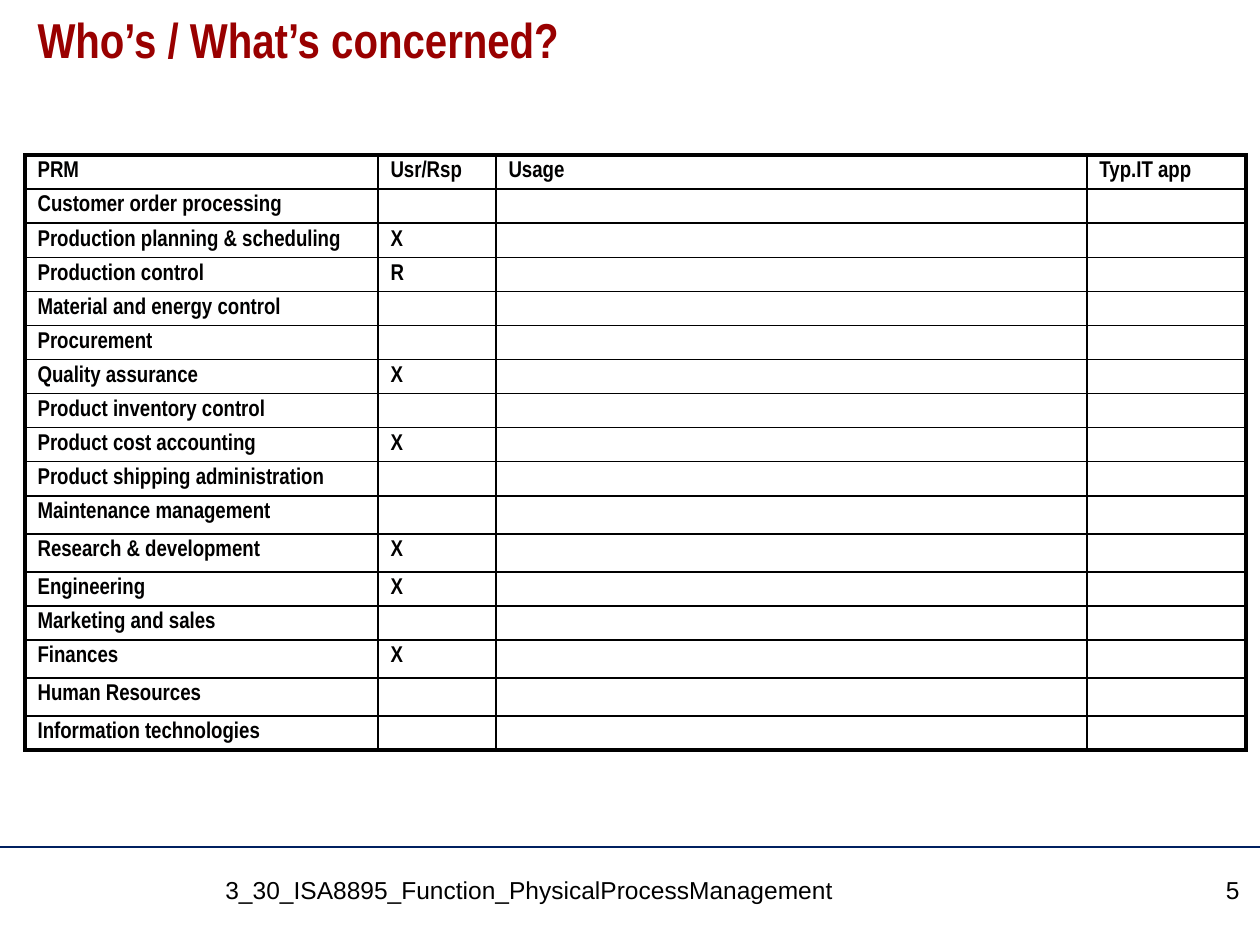
from dataclasses import dataclass

from lxml import etree
from pptx import Presentation
from pptx import util as u
from pptx.dml.color import RGBColor
from pptx.enum import shapes, text
from pptx.oxml.ns import qn

PX = 914400 // 126


@dataclass(frozen=True)
class Theme:
    """Colours, fonts and type sizes of the slide."""
    heading: str = "990000"
    ink: str = "010000"
    black: str = "000000"
    rule: str = "002060"
    narrow: str = "Arial Narrow"
    plain: str = "Arial"
    title_size: int = 28
    table_size: int = 13
    footer_size: int = 14
    thin: float = 1
    thick: float = 2.25


THEME = Theme()
COLUMNS = [353, 118, 591, 159]
HEADINGS = ["PRM", "Usr/Rsp", "Usage", "Typ.IT app"]
SHORT, TALL = 34, 38
FUNCTIONS = [
    ("Customer order processing", "", SHORT),
    ("Production planning & scheduling", "X", SHORT),
    ("Production control", "R", SHORT),
    ("Material and energy control", "", SHORT),
    ("Procurement", "", SHORT),
    ("Quality assurance", "X", SHORT),
    ("Product inventory control", "", SHORT),
    ("Product cost accounting", "X", SHORT),
    ("Product shipping administration", "", SHORT),
    ("Maintenance management", "", TALL),
    ("Research & development", "X", TALL),
    ("Engineering", "X", SHORT),
    ("Marketing and sales", "", SHORT),
    ("Finances", "X", TALL),
    ("Human Resources", "", TALL),
    ("Information technologies", "", SHORT),
]


def px(*lengths):
    """Turn whole pixels into EMU."""
    return [u.Emu(length * PX) for length in lengths]


def write(frame, words, *, size, font, color, bold=False, align=text.PP_ALIGN.LEFT, spacing=None):
    """Write one formatted paragraph into a text frame."""
    paragraph = frame.paragraphs[0]
    paragraph.alignment = align
    paragraph.line_spacing = spacing
    if not words:
        blank = etree.SubElement(paragraph._p, qn("a:endParaRPr"), sz=str(size * 100), b=str(int(bold)))
        etree.SubElement(blank, qn("a:latin"), typeface=font)
        return
    run = paragraph.add_run()
    run.text = words
    run.font.size = u.Pt(size)
    run.font.name = font
    run.font.bold = bold
    run.font.color.rgb = RGBColor.from_string(color)


def add_title(slide, words):
    """Place and fill the title placeholder."""
    title = slide.shapes.title
    title.left, title.top, title.width, title.height = px(25, 10, 1211, 105)
    frame = title.text_frame
    frame.word_wrap = True
    frame.auto_size = text.MSO_AUTO_SIZE.NONE
    frame.vertical_anchor = text.MSO_ANCHOR.TOP
    write(frame, words, size=THEME.title_size, font=THEME.narrow,
          color=THEME.heading, bold=True, spacing=0.9)


def add_footer(slide, words, left, width, align=text.PP_ALIGN.LEFT):
    """Add a footer text box."""
    frame = slide.shapes.add_textbox(*px(left, 869, width, 57)).text_frame
    frame.word_wrap = True
    write(frame, words, size=THEME.footer_size, font=THEME.plain, color=THEME.black, align=align)


def add_rule(slide):
    """Draw the line above the footer."""
    rule = slide.shapes.add_connector(shapes.MSO_CONNECTOR.STRAIGHT, *px(0, 847, 1260, 847))
    rule.line.color.rgb = RGBColor.from_string(THEME.rule)
    rule.line.width = u.Pt(0.75)
    etree.SubElement(rule._element.spPr, qn("a:effectLst"))


def set_borders(cell, outer):
    """Border a cell, thick on each side that lies on the table edge."""
    for side, is_outer in outer.items():
        width = u.Pt(THEME.thick if is_outer else THEME.thin)
        border = etree.SubElement(cell._tc.get_or_add_tcPr(), qn(f"a:ln{side}"), w=str(width))
        fill = etree.SubElement(border, qn("a:solidFill"))
        etree.SubElement(fill, qn("a:srgbClr"), val=THEME.black)


def add_function_table(slide):
    """Add the table of functions and their roles."""
    rows = [HEADINGS] + [[name, role, "", ""] for name, role, _ in FUNCTIONS]
    heights = [SHORT] + [height for _, _, height in FUNCTIONS]
    table = slide.shapes.add_table(len(rows), len(COLUMNS),
                                   *px(25, 155, sum(COLUMNS), sum(heights))).table
    table.first_row = table.horz_banding = False
    for column, width in zip(table.columns, px(*COLUMNS)):
        column.width = width
    for row, height in zip(table.rows, px(*heights)):
        row.height = height
    for r, row in enumerate(rows):
        for c, words in enumerate(row):
            cell = table.cell(r, c)
            set_borders(cell, {"L": c == 0, "R": c == len(COLUMNS) - 1,
                               "T": r == 0, "B": r == len(rows) - 1})
            cell.fill.background()
            write(cell.text_frame, words, size=THEME.table_size, font=THEME.narrow,
                  color=THEME.ink, bold=True)


def main():
    """Build and save the slide."""
    deck = Presentation()
    deck.slide_width, deck.slide_height = u.Inches(10), u.Inches(7.5)
    slide = deck.slides.add_slide(deck.slide_layouts[5])
    add_rule(slide)
    add_title(slide, "Who’s / What’s concerned?")
    add_function_table(slide)
    add_footer(slide, "3_30_ISA8895_Function_PhysicalProcessManagement", 213, 908)
    add_footer(slide, "5", 1136, 116, text.PP_ALIGN.RIGHT)
    deck.save("out.pptx")


if __name__ == "__main__":
    main()
